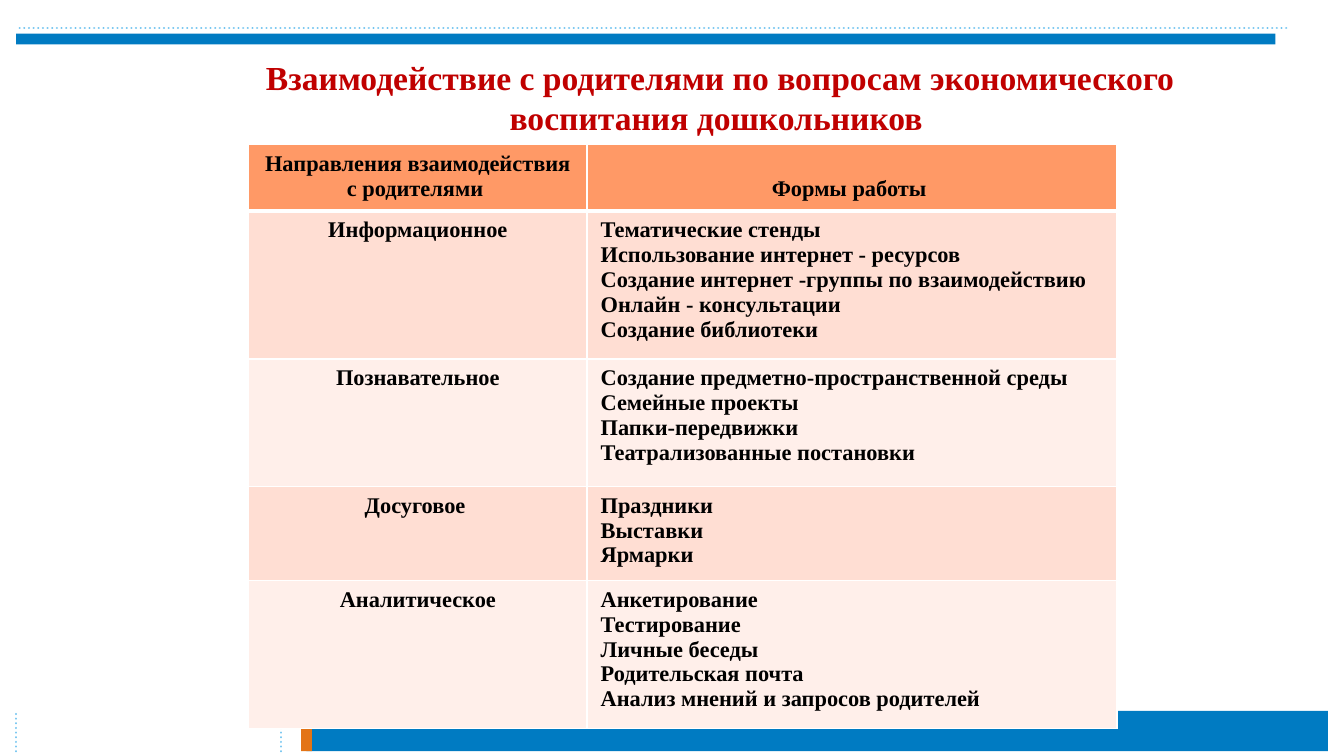
from lxml import etree
from pptx import Presentation
from pptx import util as u
from pptx.dml.color import RGBColor
from pptx.enum import dml, shapes, text
from pptx.oxml.ns import qn

# Square grid: 100 columns by 56.25 rows
COLS, ROWS = 100, 56.25
UNIT = u.Inches(10) / COLS
FONT = "Times New Roman"
BLUE, SKY, ORANGE = "007BC2", "71C4F0", "E37416"
RED, BLACK, WHITE = "C00000", "000000", "FFFFFF"
HEADER, BANDS = "FF9966", ("FFDED3", "FFEFEA")

HEADINGS = ("Направления взаимодействия с родителями ", "Формы работы ")
# Direction, row height, forms of work
DIRECTIONS = [
    ("Информационное", 11, [
        "Тематические стенды",
        "Использование интернет - ресурсов",
        "Создание интернет -группы по взаимодействию",
        "Онлайн - консультации",
        "Создание библиотеки"]),
    ("Познавательное", 9.5, [
        "Создание предметно-пространственной среды",
        "Семейные проекты",
        "Папки-передвижки",
        "Театрализованные постановки"]),
    ("Досуговое ", 7, [
        "Праздники",
        "Выставки",
        "Ярмарки"]),
    ("Аналитическое", 11, [
        "Анкетирование",
        "Тестирование",
        "Личные беседы",
        "Родительская почта",
        "Анализ мнений и запросов родителей"]),
]


def grid(*values):
    return [u.Emu(round(v * UNIT)) for v in values]


def color(value):
    return RGBColor.from_string(value)


def bar(s, x, y, w, h, fill):
    sp = s.shapes.add_shape(shapes.MSO_SHAPE.RECTANGLE, *grid(x, y, w, h))
    sp.shadow.inherit = False
    sp.fill.solid()
    sp.fill.fore_color.rgb = color(fill)
    sp.line.fill.background()


def dotted_line(s, x1, y1, x2, y2):
    line = s.shapes.add_connector(shapes.MSO_CONNECTOR.STRAIGHT, *grid(x1, y1, x2, y2))
    line.line.color.rgb = color(SKY)
    line.line.width = u.Pt(1.25)
    line.line.dash_style = dml.MSO_LINE.ROUND_DOT
    props = line._element.spPr
    props.find(qn("a:ln")).set("cap", "rnd")
    etree.SubElement(props, qn("a:effectLst"))


def write(tf, lines, size, ink, align):
    tf.text = "\n".join(lines)
    for p in tf.paragraphs:
        p.alignment = align
        p.font.size = u.Pt(size)
        for r in p.runs:
            r.font.name = FONT
            r.font.size = u.Pt(size)
            r.font.bold = True
            r.font.color.rgb = color(ink)


def top_band(s, x, y, w, h):
    bar(s, x, y + h / 3, w - 0.8, h * 2 / 3, BLUE)
    dotted_line(s, x + w, y, x, y)


def bottom_band(s, x, y, w, h):
    bar(s, x + 21.6, y, w - 21.6, h, BLUE)
    bar(s, x + 21.2, y, 0.8, h, ORANGE)
    for offset in (0, 19.7):
        dotted_line(s, x + offset, y + h, x + offset, y)


def title(s, x, y, w, h):
    sp = s.shapes.title
    sp.left, sp.top, sp.width, sp.height = grid(x, y, w, h)
    tf = sp.text_frame
    write(tf, ["Взаимодействие с родителями по вопросам экономического "
               "воспитания дошкольников "], 18, RED, text.PP_ALIGN.CENTER)
    tf.word_wrap = True
    tf.auto_size = text.MSO_AUTO_SIZE.NONE
    tf.vertical_anchor = text.MSO_ANCHOR.TOP


def cell_borders(cell, **widths):
    props = cell._tc.get_or_add_tcPr()
    for i, side in enumerate("LRTB"):
        ln = etree.Element(qn(f"a:ln{side}"), w=str(u.Pt(widths.get(side, 1))))
        fill = etree.SubElement(ln, qn("a:solidFill"))
        etree.SubElement(fill, qn("a:srgbClr"), val=WHITE)
        props.insert(i, ln)


def fill_cell(cell, lines, fill, align, **borders):
    write(cell.text_frame, lines, 12, BLACK, align)
    cell.fill.solid()
    cell.fill.fore_color.rgb = color(fill)
    cell_borders(cell, **borders)


def work_table(s, x, y, w, h):
    center, left = text.PP_ALIGN.CENTER, text.PP_ALIGN.LEFT
    table = s.shapes.add_table(len(DIRECTIONS) + 1, 2, *grid(x, y, w, h)).table
    for column, share in zip(table.columns, (0.39, 0.61)):
        column.width = grid(w * share)[0]
    heights = [height for _, height, _ in DIRECTIONS]
    for row, height in zip(table.rows, [h - sum(heights), *heights]):
        row.height = grid(height)[0]
    # Header row
    for col, heading in enumerate(HEADINGS):
        cell = table.cell(0, col)
        fill_cell(cell, [heading], HEADER, center, B=3)
        cell.vertical_anchor = text.MSO_ANCHOR.BOTTOM
        cell.margin_bottom = grid(0.7)[0]
    # One banded row per direction
    for row, (name, _, forms) in enumerate(DIRECTIONS, 1):
        fill = BANDS[(row - 1) % 2]
        top = 3 if row == 1 else 1
        fill_cell(table.cell(row, 0), [name], fill, center, T=top)
        fill_cell(table.cell(row, 1), forms, fill, left, T=top)


def main():
    prs = Presentation()
    prs.slide_width, prs.slide_height = grid(COLS, ROWS)
    s = prs.slides.add_slide(prs.slide_layouts[5])
    bottom_band(s, 1.2, 52.9, 97.6, 3)
    top_band(s, 1.2, 2.1, 94.5, 1.2)
    title(s, 15.4, 3.7, 76.4, 7.1)
    work_table(s, 18.5, 10.7, 64.6, 43.5)
    prs.save("out.pptx")


if __name__ == "__main__":
    main()
